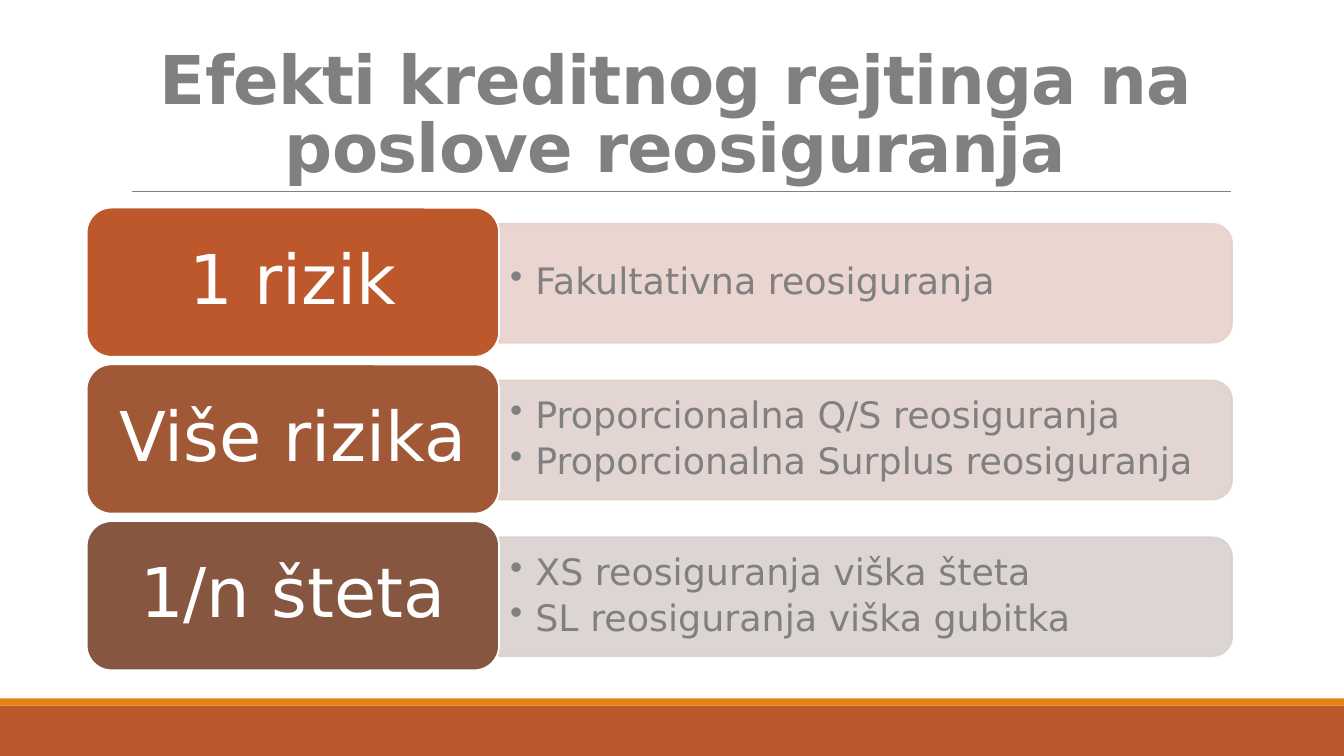
from lxml import etree
from pptx import Presentation
from pptx.dml.color import RGBColor
from pptx.enum.shapes import MSO_CONNECTOR, MSO_SHAPE
from pptx.enum.text import MSO_ANCHOR, PP_ALIGN
from pptx.oxml.ns import qn
from pptx.util import Inches, Pt

RECTANGLE = MSO_SHAPE.RECTANGLE
ROUNDED = MSO_SHAPE.ROUNDED_RECTANGLE
ROUNDED_TOP = MSO_SHAPE.ROUND_2_SAME_RECTANGLE
STRAIGHT = MSO_CONNECTOR.STRAIGHT
MIDDLE, BOTTOM = MSO_ANCHOR.MIDDLE, MSO_ANCHOR.BOTTOM
LEFT, CENTER = PP_ALIGN.LEFT, PP_ALIGN.CENTER

FONT = "DejaVu Sans"
WHITE = RGBColor(0xFF, 0xFF, 0xFF)
GRAY = RGBColor(0x80, 0x80, 0x80)
RUST = RGBColor(0xBD, 0x58, 0x2C)
ORANGE = RGBColor(0xE4, 0x83, 0x12)

# Label, label colour, panel colour, details
ROWS = [
    ("1 rizik", RUST, RGBColor(0xE8, 0xD1, 0xCD),
     ["Fakultativna reosiguranja"]),
    ("Više rizika", RGBColor(0xA0, 0x58, 0x37), RGBColor(0xE1, 0xD1, 0xCE),
     ["Proporcionalna Q/S reosiguranja", "Proporcionalna Surplus reosiguranja"]),
    ("1/n šteta", RGBColor(0x86, 0x56, 0x40), RGBColor(0xD9, 0xD1, 0xCF),
     ["XS reosiguranja viška šteta", "SL reosiguranja viška gubitka"]),
]

# Row grid, in inches
ROWS_TOP, ROW_PITCH = 2.06, 1.555
LABEL_LEFT, LABEL_WIDTH, LABEL_HEIGHT = 0.86, 4.09, 1.48
PANEL_LEFT = LABEL_LEFT + LABEL_WIDTH
PANEL_WIDTH, PANEL_HEIGHT = 7.27, 1.18
DETAIL_WIDTH, DETAIL_HEIGHT = 7.21, 1.07

deck = Presentation()
deck.slide_width, deck.slide_height = Inches(13.33), Inches(7.5)
page = deck.slides.add_slide(deck.slide_layouts[6])


def add_block(kind, left, top, width, height, fill, outline=None):
    block = page.shapes.add_shape(
        kind, Inches(left), Inches(top), Inches(width), Inches(height))
    block.shadow.inherit = False
    block.fill.solid()
    block.fill.fore_color.rgb = fill
    if outline is None:
        block.line.fill.background()
    else:
        block.line.color.rgb = outline
        block.line.width = Pt(1.25)
    return block


def style_text(frame, lines, size, color, align, anchor, spacing):
    frame.word_wrap = True
    frame.vertical_anchor = anchor
    frame.text = "\n".join(lines)
    for para in frame.paragraphs:
        para.alignment = align
        para.line_spacing = spacing
        for span in para.runs:
            span.font.name = FONT
            span.font.size = Pt(size)
            span.font.color.rgb = color


# Footer bands
add_block(RECTANGLE, 0, 7, 13.33, 0.5, RUST)
add_block(RECTANGLE, 0, 6.93, 13.33, 0.07, ORANGE)

# Title and its rule
rule = page.shapes.add_connector(
    STRAIGHT, Inches(1.31), Inches(1.9), Inches(12.21), Inches(1.9))
rule.line.color.rgb = GRAY
rule.line.width = Pt(0.5)
etree.SubElement(rule._element.spPr, qn("a:effectLst"))

title = page.shapes.add_textbox(Inches(1.2), Inches(0.31), Inches(11), Inches(1.59))
style_text(title.text_frame, ["Efekti kreditnog rejtinga na poslove reosiguranja"],
           48, GRAY, CENTER, BOTTOM, 0.85)
title_span = title.text_frame.paragraphs[0].runs[0]
title_span.font.bold = True
title_span.font._element.set("spc", "-50")

# Rows: panel, details, label
for index, (label, label_color, panel_color, details) in enumerate(ROWS):
    top = ROWS_TOP + index * ROW_PITCH
    middle = top + LABEL_HEIGHT / 2 + 0.01

    # The panel stands upright and is turned so its round corners face right
    panel = add_block(ROUNDED_TOP, PANEL_LEFT + (PANEL_WIDTH - PANEL_HEIGHT) / 2,
                      middle - PANEL_WIDTH / 2, PANEL_HEIGHT, PANEL_WIDTH,
                      panel_color, panel_color)
    panel.rotation = 90
    for color in panel._element.spPr.iter(qn("a:srgbClr")):
        etree.SubElement(color, qn("a:alpha"), val="90000")

    detail_box = page.shapes.add_textbox(
        Inches(PANEL_LEFT), Inches(middle - DETAIL_HEIGHT / 2),
        Inches(DETAIL_WIDTH), Inches(DETAIL_HEIGHT))
    frame = detail_box.text_frame
    frame.margin_left = frame.margin_right = Inches(0.11)
    style_text(frame, details, 26, GRAY, LEFT, MIDDLE, 0.9)
    for para in frame.paragraphs:
        para.space_after = Pt(4.5)
        properties = para._p.get_or_add_pPr()
        properties.set("marL", str(Inches(0.25)))
        properties.set("indent", str(-Inches(0.25)))
        etree.SubElement(properties, qn("a:buChar"), char="•")

    label_box = add_block(ROUNDED, LABEL_LEFT, top, LABEL_WIDTH, LABEL_HEIGHT,
                          label_color, WHITE)
    style_text(label_box.text_frame, [label], 49, WHITE, CENTER, MIDDLE, 0.9)

deck.save("out.pptx")
